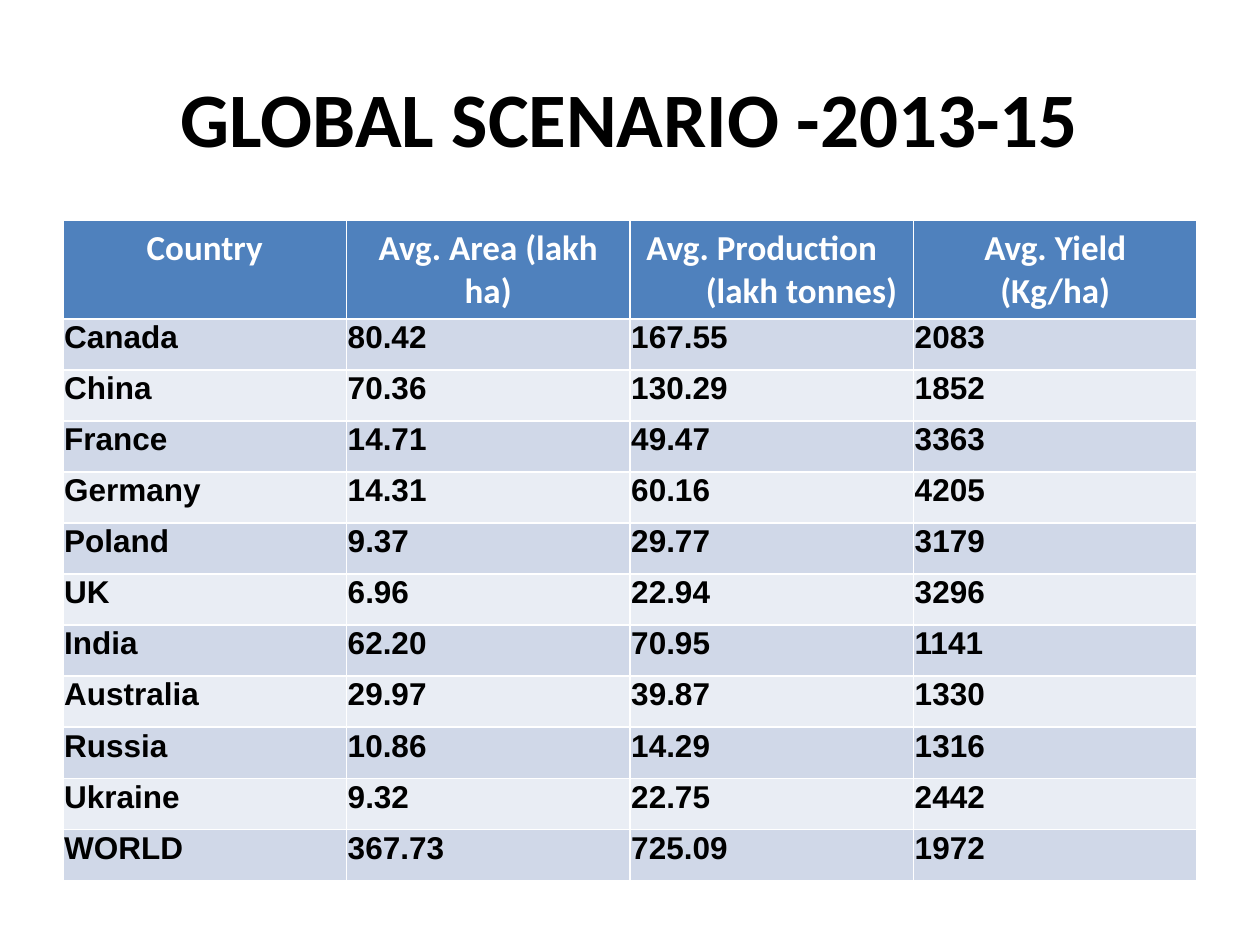
"""Build the global scenario slide with its country table."""
from pptx import Presentation
from pptx.dml.color import RGBColor
from pptx.enum.text import MSO_ANCHOR, PP_ALIGN
from pptx.util import Inches, Pt

CENTER, LEFT, RIGHT = PP_ALIGN.CENTER, PP_ALIGN.LEFT, PP_ALIGN.RIGHT
MIDDLE = MSO_ANCHOR.MIDDLE
BLACK = RGBColor(0x00, 0x00, 0x00)
WHITE = RGBColor(0xFF, 0xFF, 0xFF)
HEADER_BLUE = RGBColor(0x4F, 0x81, 0xBD)
BANDS = [RGBColor(0xE9, 0xED, 0xF4), RGBColor(0xD0, 0xD8, 0xE8)]

HEADERS = [
    "Country",
    "Avg. Area (lakh ha)",
    "Avg. Production\n(lakh tonnes)",
    "Avg. Yield\n(Kg/ha)",
]
COUNTRIES = [
    ["Canada", "80.42", "167.55", "2083"],
    ["China", "70.36", "130.29", "1852"],
    ["France", "14.71", "49.47", "3363"],
    ["Germany", "14.31", "60.16", "4205"],
    ["Poland", "9.37", "29.77", "3179"],
    ["UK", "6.96", "22.94", "3296"],
    ["India", "62.20", "70.95", "1141"],
    ["Australia", "29.97", "39.87", "1330"],
    ["Russia", "10.86", "14.29", "1316"],
    ["Ukraine", "9.32", "22.75", "2442"],
    ["WORLD", "367.73", "725.09", "1972"],
]
HEADER_HEIGHT = Inches(0.77)
TABLE_HEIGHT = Inches(5.23)


def format_text(text_frame, font_name, size, color, alignment):
    for paragraph in text_frame.paragraphs:
        paragraph.alignment = alignment
        for run in paragraph.runs:
            run.font.name = font_name
            run.font.size = Pt(size)
            run.font.bold = True
            run.font.color.rgb = color


def set_margins(cell, side, top, bottom):
    cell.margin_left = cell.margin_right = Inches(side)
    cell.margin_top = Inches(top)
    cell.margin_bottom = Inches(bottom)


presentation = Presentation()
presentation.slide_width = Inches(10)
presentation.slide_height = Inches(7.5)
slide = presentation.slides.add_slide(presentation.slide_layouts[5])

title = slide.shapes.title
title.left, title.top = Inches(0.5), Inches(0.3)
title.width, title.height = Inches(9), Inches(1.25)
title.text_frame.text = "GLOBAL SCENARIO -2013-15"
title.text_frame.vertical_anchor = MIDDLE
format_text(title.text_frame, "Calibri", 44, BLACK, CENTER)

rows = [HEADERS] + COUNTRIES
table = slide.shapes.add_table(
    len(rows), len(HEADERS), Inches(0.5), Inches(1.75), Inches(9), TABLE_HEIGHT
).table
body_height = (TABLE_HEIGHT - HEADER_HEIGHT) // len(COUNTRIES)

for row_index, values in enumerate(rows):
    is_header = row_index == 0
    table.rows[row_index].height = HEADER_HEIGHT if is_header else body_height
    for column_index, value in enumerate(values):
        cell = table.cell(row_index, column_index)
        cell.text_frame.text = value
        cell.fill.solid()
        if is_header:
            cell.fill.fore_color.rgb = HEADER_BLUE
            set_margins(cell, 0.1, 0.05, 0.05)
            format_text(cell.text_frame, "Calibri", 20, WHITE, CENTER)
        else:
            cell.fill.fore_color.rgb = BANDS[row_index % 2]
            set_margins(cell, 0.01, 0.01, 0)
            format_text(cell.text_frame, "Arial", 18, BLACK, LEFT)

country_header = table.cell(0, 0)
set_margins(country_header, 0.07, 0, 0)
country_header.text_frame.paragraphs[0].line_spacing = 1.15

production_header = table.cell(0, 2)
set_margins(production_header, 0.13, 0.05, 0.05)
for paragraph, alignment in zip(production_header.text_frame.paragraphs, [LEFT, RIGHT]):
    paragraph.alignment = alignment

presentation.save("out.pptx")
